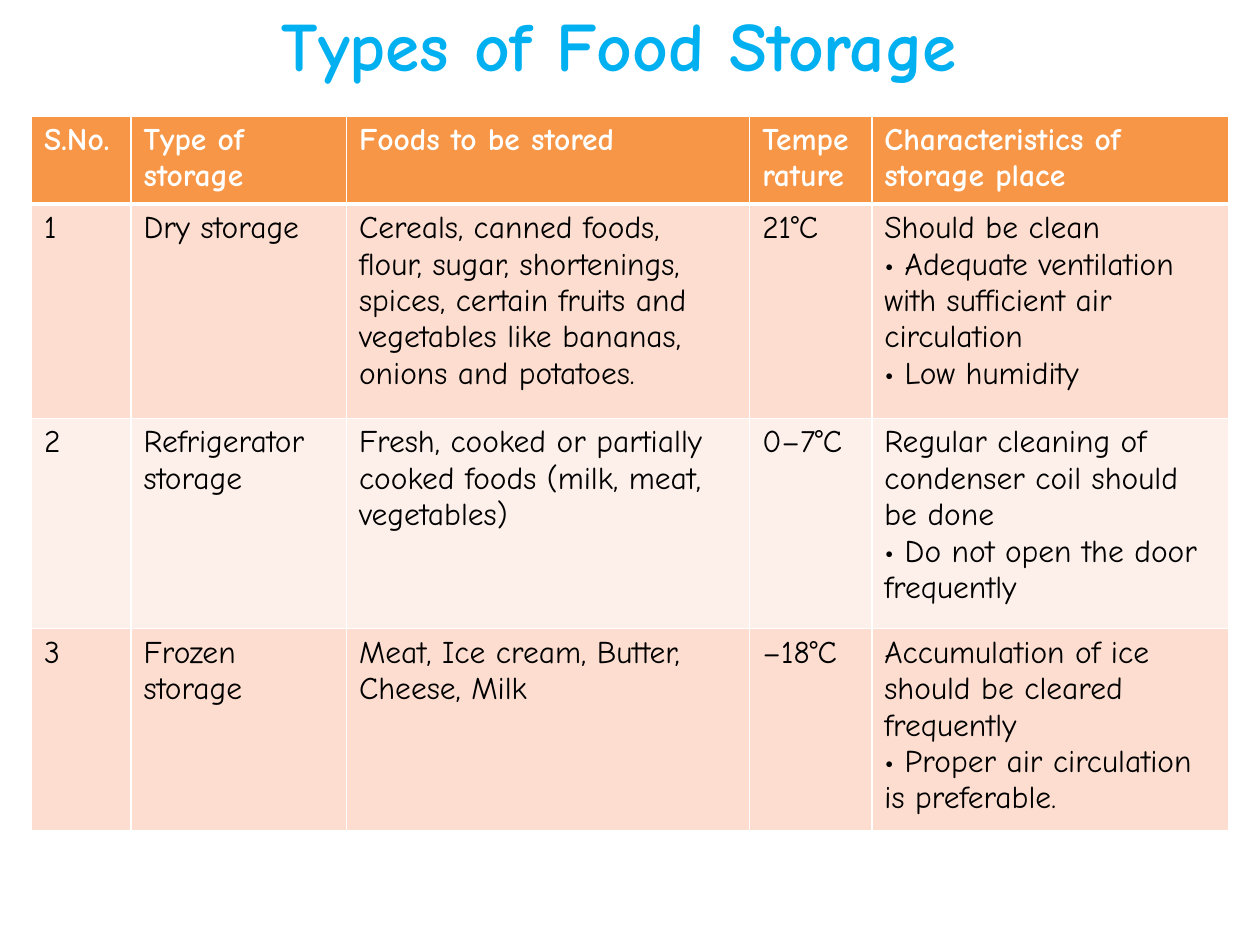
from dataclasses import dataclass

from lxml import etree
from pptx import Presentation
from pptx.dml.color import RGBColor
from pptx.enum.text import MSO_ANCHOR, PP_ALIGN
from pptx.oxml.ns import qn
from pptx.util import Pt

CENTER = PP_ALIGN.CENTER
MIDDLE = MSO_ANCHOR.MIDDLE
FONT = "Comic Neue"
WHITE = "FFFFFF"
COLUMN_WIDTHS = (56.9, 123.1, 230.4, 69.8, 203.8)
THIN, THICK = 1, 3


@dataclass(frozen=True)
class StorageRow:
    height: float
    fill: str
    cells: tuple[str, ...]
    color: str = "000000"
    bold: bool = False
    top: float = THIN
    bottom: float = THIN


ROWS = (
    StorageRow(48.2, "F79646", (
        "S.No.",
        "Type of\nstorage",
        "Foods to be stored",
        "Temperature",
        "Characteristics of\nstorage place",
    ), color=WHITE, bold=True, bottom=THICK),
    StorageRow(122.4, "FCDDCF", (
        "1",
        "Dry storage",
        "Cereals, canned foods,\nflour, sugar, shortenings,\nspices, certain fruits and\n"
        "vegetables like bananas,\nonions and potatoes.",
        "21°C",
        "Should be clean\n• Adequate ventilation\nwith sufficient air\ncirculation\n• Low humidity",
    ), top=THICK),
    StorageRow(120.2, "FDEFE9", (
        "2",
        "Refrigerator\nstorage",
        "Fresh, cooked or partially\ncooked foods (milk, meat,\nvegetables)",
        "0–7°C",
        "Regular cleaning of\ncondenser coil should\nbe done\n• Do not open the door\nfrequently",
    )),
    StorageRow(111, "FCDDCF", (
        "3",
        "Frozen\nstorage",
        "Meat, Ice cream, Butter,\nCheese, Milk",
        "–18°C",
        "Accumulation of ice\nshould be cleared\nfrequently\n• Proper air circulation\nis preferable.",
    )),
)


def rgb(value: str) -> RGBColor:
    return RGBColor.from_string(value)


def write_text(frame, text: str, size: float, color: str, bold: bool) -> None:
    frame.text = text
    for paragraph in frame.paragraphs:
        font = paragraph.font
        font.name = FONT
        font.size = Pt(size)
        font.bold = bold
        font.color.rgb = rgb(color)


def draw_borders(cell, row: StorageRow) -> None:
    properties = cell._tc.get_or_add_tcPr()
    widths = {"lnL": THIN, "lnR": THIN, "lnT": row.top, "lnB": row.bottom}
    for side, width in widths.items():
        line = etree.SubElement(properties, qn(f"a:{side}"), w=str(Pt(width)))
        fill = etree.SubElement(line, qn("a:solidFill"))
        etree.SubElement(fill, qn("a:srgbClr"), val=WHITE)


def draw_title(page) -> None:
    box = page.shapes.add_textbox(Pt(30), Pt(0), Pt(648), Pt(50.4))
    frame = box.text_frame
    frame.word_wrap = True
    frame.vertical_anchor = MIDDLE
    write_text(frame, "Types of Food Storage", 39.6, "00B0F0", True)
    frame.paragraphs[0].alignment = CENTER


def draw_table(page, rows: tuple[StorageRow, ...]) -> None:
    table = page.shapes.add_table(
        len(rows), len(COLUMN_WIDTHS), Pt(18), Pt(66.2),
        Pt(sum(COLUMN_WIDTHS)), Pt(sum(row.height for row in rows)),
    ).table
    for column, width in zip(table.columns, COLUMN_WIDTHS):
        column.width = Pt(width)
    for table_row, row in zip(table.rows, rows):
        table_row.height = Pt(row.height)
        for cell, text in zip(table_row.cells, row.cells):
            draw_borders(cell, row)
            cell.fill.solid()
            cell.fill.fore_color.rgb = rgb(row.fill)
            write_text(cell.text_frame, text, 18, row.color, row.bold)


def main() -> None:
    deck = Presentation()
    deck.slide_width = Pt(720)
    deck.slide_height = Pt(540)
    page = deck.slides.add_slide(deck.slide_layouts[6])
    draw_title(page)
    draw_table(page, ROWS)
    deck.save("out.pptx")


if __name__ == "__main__":
    main()
